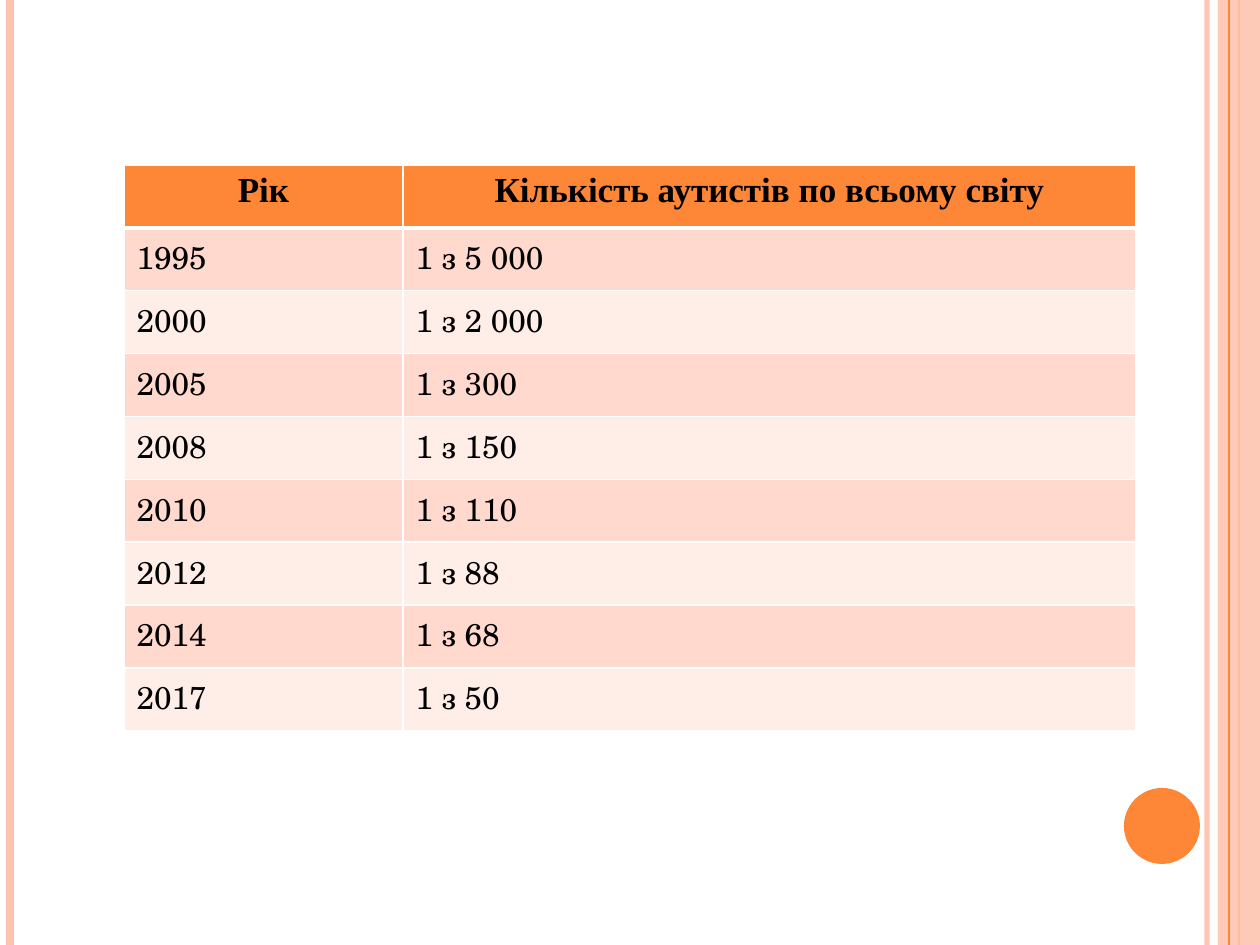
from lxml import etree
from pptx import Presentation
from pptx import util as u
from pptx.dml.color import RGBColor
from pptx.enum import shapes, text
from pptx.oxml.ns import qn

PX = 914400 / 126
WIDTH, HEIGHT = 1260, 945
ORANGE, PEACH, WHITE, BLACK = "FE8637", "FEC3AE", "FFFFFF", "000000"
BANDS = ["FFD9CE", "FFEDE8"]

HEADER = ("Рік", "Кількість аутистів по всьому світу")
RATES = [
    ("1995", "1 з 5 000"),
    ("2000", "1 з 2 000"),
    ("2005", "1 з 300"),
    ("2008", "1 з 150"),
    ("2010", "1 з 110"),
    ("2012", "1 з 88"),
    ("2014", "1 з 68"),
    ("2017", "1 з 50"),
]


def px(length):
    return u.Emu(round(length * PX))


def color(hex_string):
    return RGBColor.from_string(hex_string)


def paint(fill, hex_string, opacity=100):
    fill.solid()
    fill.fore_color.rgb = color(hex_string)
    if opacity < 100:
        set_opacity(fill.fore_color, fill, opacity)


def set_opacity(fore_color, fill, opacity):
    # The alpha element sits inside the colour of the solid fill
    rgb = fill._xPr.find(qn("a:solidFill")).find(qn("a:srgbClr"))
    etree.SubElement(rgb, qn("a:alpha")).set("val", str(opacity * 1000))


def add_stripe(slide, x, top, height, hex_string, points, opacity=100):
    stripe = slide.shapes.add_connector(
        shapes.MSO_CONNECTOR.STRAIGHT, px(x), px(top), px(x), px(top + height))
    stripe.line.width = u.Pt(points)
    paint(stripe.line.fill, hex_string, opacity)
    etree.SubElement(stripe._element.spPr, qn("a:effectLst"))


def add_plain_shape(slide, kind, left, top, width, height, hex_string, opacity=100):
    shape = slide.shapes.add_shape(kind, px(left), px(top), px(width), px(height))
    shape.shadow.inherit = False
    shape.line.fill.background()
    paint(shape.fill, hex_string, opacity)


def add_frame(slide, left, top, width, height):
    right = left + width
    # Stripes and band along the edges
    add_stripe(slide, right - 53, top, height, PEACH, 3, 93)
    add_stripe(slide, left + 10, top, height, PEACH, 4.5)
    add_stripe(slide, right - 21, top, height, ORANGE, 1.5)
    add_plain_shape(slide, shapes.MSO_SHAPE.RECTANGLE,
                    right - 42, top, 42, height, PEACH, 87)
    add_stripe(slide, right - 31, top, height, ORANGE, 0.75)
    # Corner dot
    add_plain_shape(slide, shapes.MSO_SHAPE.OVAL,
                    right - 136, top + height - 157, 76, 76, ORANGE)


def set_borders(cell, bottom_points):
    properties = cell._tc.get_or_add_tcPr()
    widths = {"a:lnL": 1, "a:lnR": 1, "a:lnT": 1, "a:lnB": bottom_points}
    for position, (tag, points) in enumerate(widths.items()):
        line = etree.Element(qn(tag), w=str(u.Pt(points)))
        fill = etree.SubElement(line, qn("a:solidFill"))
        etree.SubElement(fill, qn("a:srgbClr")).set("val", WHITE)
        properties.insert(position, line)


def fill_cell(cell, words, fill, font, size, bold, align, bottom_points):
    paint(cell.fill, fill)
    set_borders(cell, bottom_points)
    paragraph = cell.text_frame.paragraphs[0]
    paragraph.alignment = align
    run = paragraph.add_run()
    run.text = words
    run.font.name = font
    run.font.size = u.Pt(size)
    run.font.bold = bold
    run.font.color.rgb = color(BLACK)


def add_rate_table(slide, left, top, width, height):
    rows = [HEADER] + RATES
    table = slide.shapes.add_table(
        len(rows), len(HEADER), px(left), px(top), px(width), px(height)).table
    year_width = 279
    table.columns[0].width = px(year_width)
    table.columns[1].width = px(width - year_width)
    for row_index, row in enumerate(rows):
        table.rows[row_index].height = px(height / len(rows))
        if row_index == 0:
            style = (ORANGE, "Times New Roman", 20, True, text.PP_ALIGN.CENTER, 3)
        else:
            band = BANDS[(row_index - 1) % 2]
            style = (band, "TeX Gyre Schola", 18, False, text.PP_ALIGN.LEFT, 1)
        for column_index, words in enumerate(row):
            fill_cell(table.cell(row_index, column_index), words, *style)
        if row_index == 1:
            # The thick rule under the header is shared with this row
            for cell in table.rows[1].cells:
                cell._tc.tcPr.find(qn("a:lnT")).set("w", str(u.Pt(3)))


def main():
    presentation = Presentation()
    presentation.slide_width, presentation.slide_height = px(WIDTH), px(HEIGHT)
    slide = presentation.slides.add_slide(presentation.slide_layouts[6])
    add_frame(slide, 0, 0, WIDTH, HEIGHT)
    add_rate_table(slide, 124, 165, 1012, 566)
    presentation.save("out.pptx")


if __name__ == "__main__":
    main()
